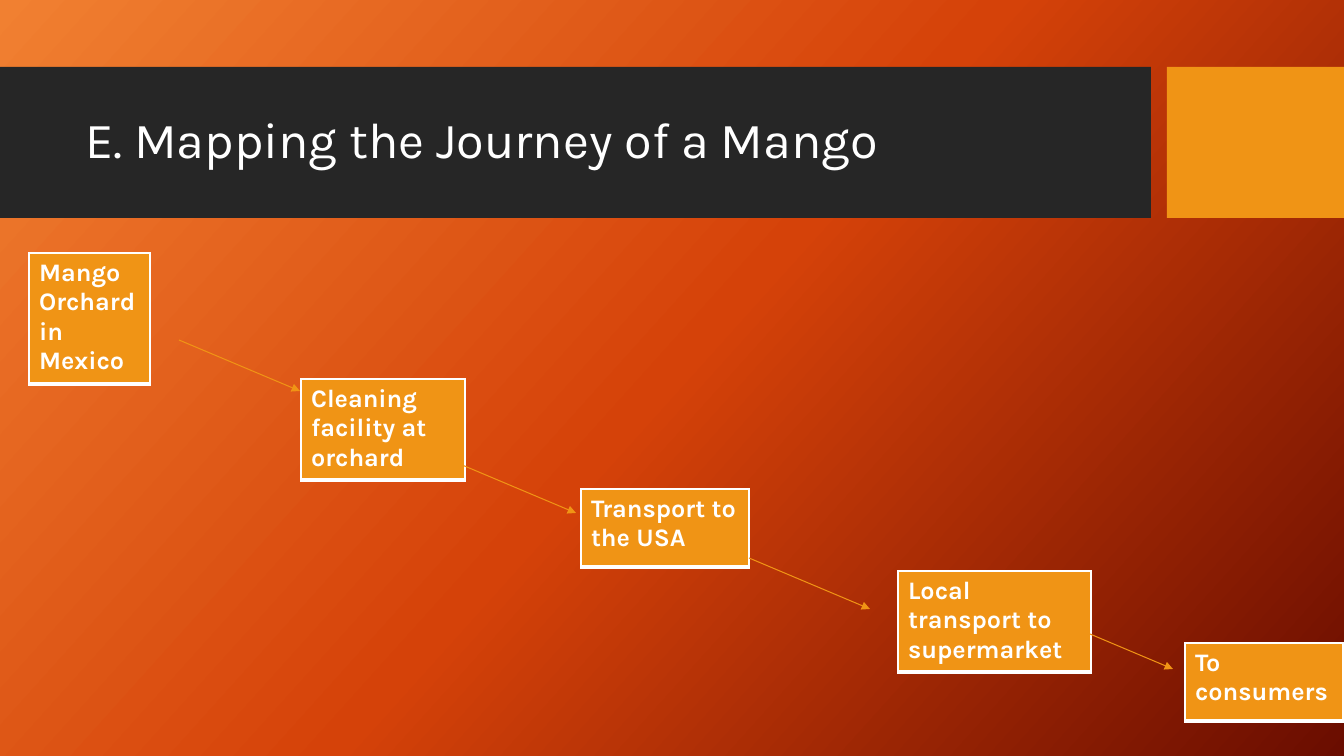
import copy
from dataclasses import dataclass

import pptx
import pptx.dml.color
import pptx.enum.shapes
import pptx.enum.text
import pptx.oxml
import pptx.oxml.ns
import pptx.util

PX = 914400 / 100.8
WIDTH, HEIGHT = 1344, 756


@dataclass(frozen=True)
class Theme:
    font: str = "Karla"
    text: str = "FFFFFF"
    band: str = "262626"
    accent: str = "F09415"
    background: tuple = ((0, "F18031"), (0.5, "D54209"), (1, "6A0D00"))
    background_angle: int = 42
    title_size: int = 36
    step_size: int = 18


THEME = Theme()

# text, box (left, top, width, height)
STEPS = [
    ("Mango Orchard in Mexico", (29, 253, 121, 131)),
    ("Cleaning facility at orchard", (301, 379, 164, 101)),
    ("Transport to the USA", (581, 489, 168, 78)),
    ("Local transport to supermarket", (898, 571, 193, 101)),
    ("To consumers", (1185, 643, 158, 78)),
]
ARROW_STARTS = [(179, 340), (455, 462), (749, 558), (1052, 618)]
ARROW_RUN, ARROW_DROP = 121, 51


def px(*lengths):
    return [pptx.util.Emu(round(n * PX)) for n in lengths]


def rgb(value):
    return pptx.dml.color.RGBColor.from_string(value)


def xml(tag, content="", attributes=""):
    ns = pptx.oxml.ns.nsdecls("a")
    return pptx.oxml.parse_xml(f"<a:{tag} {ns} {attributes}>{content}</a:{tag}>")


def style_font(font, size, bold):
    font.name = THEME.font
    font.size = pptx.util.Pt(size)
    font.bold = bold
    font.color.rgb = rgb(THEME.text)


def paint_background(s):
    fill = s.background.fill
    fill.gradient()
    # python-pptx measures the angle counter-clockwise
    fill.gradient_angle = 360 - THEME.background_angle
    stops = s.element.xpath(".//a:gsLst")[0]
    stops.append(copy.deepcopy(stops[0]))
    for stop, (position, color) in zip(fill.gradient_stops, THEME.background):
        stop.position = position
        stop.color.rgb = rgb(color)


def add_block(s, box, color):
    sp = s.shapes.add_shape(pptx.enum.shapes.MSO_SHAPE.RECTANGLE, *px(*box))
    sp.shadow.inherit = False
    sp.fill.solid()
    sp.fill.fore_color.rgb = rgb(color)
    sp.line.fill.background()


def add_header(s, box, text):
    left, top, width, height = box
    band_width, accent_width = 1151, 177
    add_block(s, (left, top, band_width, height), THEME.band)
    add_block(s, (left + width - accent_width, top, accent_width, height), THEME.accent)

    title = s.shapes.title
    title.element.getparent().append(title.element)  # in front of the band
    title.left, title.top, title.width, title.height = px(left + 75, top + 16, 1059, 119)
    tf = title.text_frame
    tf.text = text
    tf.word_wrap = True
    tf.vertical_anchor = pptx.enum.text.MSO_ANCHOR.MIDDLE
    p = tf.paragraphs[0]
    p.alignment = pptx.enum.text.PP_ALIGN.LEFT
    p.line_spacing = 0.9
    style_font(p.font, THEME.title_size, False)


def add_step(s, box, text):
    """Place one step as a single-cell table with a heavy lower edge."""
    table = s.shapes.add_table(1, 1, *px(*box)).table
    table.first_row = table.horz_banding = False
    cell = table.cell(0, 0)
    cell.text = text
    style_font(cell.text_frame.paragraphs[0].font, THEME.step_size, True)
    cell.fill.solid()
    cell.fill.fore_color.rgb = rgb(THEME.accent)

    color = f'<a:solidFill><a:srgbClr val="{THEME.text}"/></a:solidFill>'
    properties = cell.fill._xPr
    for i, (side, points) in enumerate((("L", 1), ("R", 1), ("T", 1), ("B", 3))):
        properties.insert(i, xml(f"ln{side}", color, f'w="{pptx.util.Pt(points)}"'))


def add_arrow(s, x, y):
    line = s.shapes.add_connector(
        pptx.enum.shapes.MSO_CONNECTOR.STRAIGHT,
        *px(x, y, x + ARROW_RUN, y + ARROW_DROP))
    line.line.color.rgb = rgb(THEME.accent)
    line.line.width = pptx.util.Pt(0.75)
    line.line._get_or_add_ln().append(xml("tailEnd", attributes='type="triangle"'))
    line.element.spPr.append(xml("effectLst"))


def add_journey(s):
    for text, box in STEPS:
        add_step(s, box, text)
    for x, y in ARROW_STARTS:
        add_arrow(s, x, y)


def main():
    prs = pptx.Presentation()
    prs.slide_width, prs.slide_height = px(WIDTH, HEIGHT)
    s = prs.slides.add_slide(prs.slide_layouts.get_by_name("Title Only"))
    paint_background(s)
    add_header(s, (0, 67, WIDTH, 151), "E. Mapping the Journey of a Mango")
    add_journey(s)
    prs.save("out.pptx")


if __name__ == "__main__":
    main()
